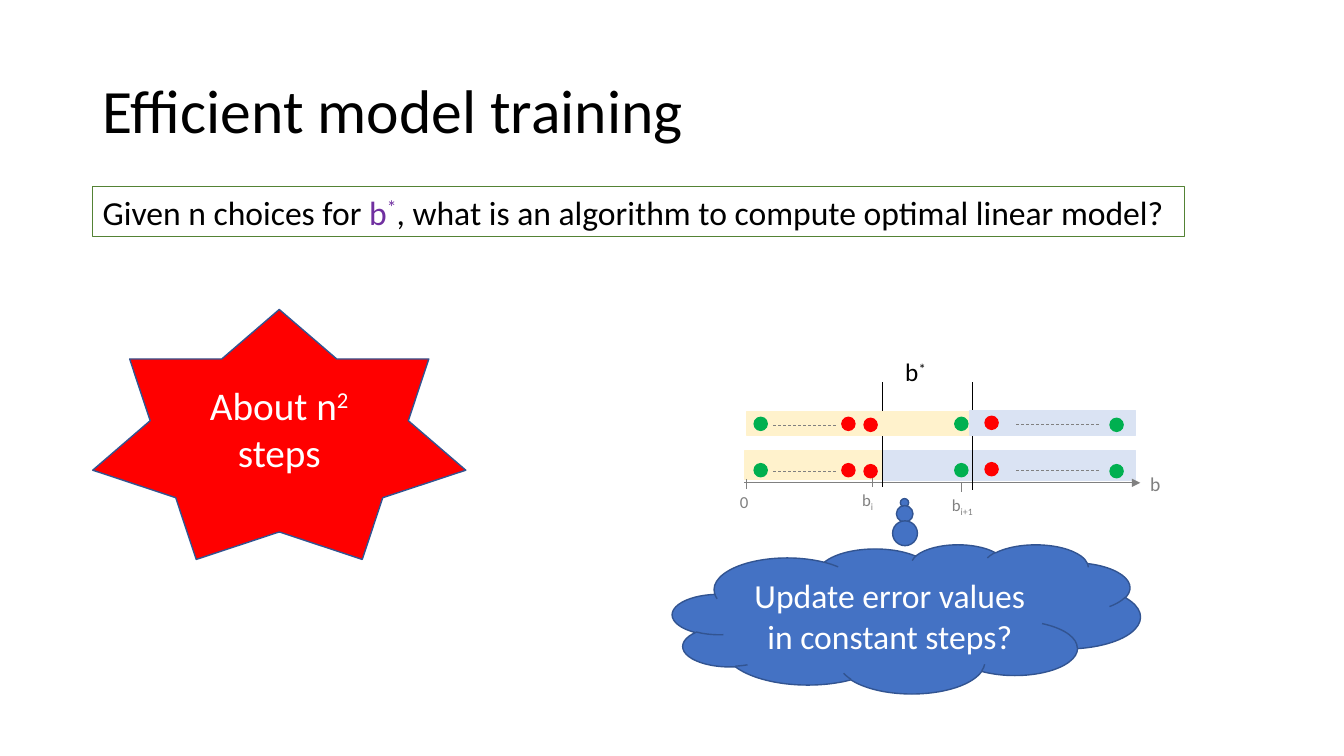
"""Build the slide on efficient training of a linear model."""
import pptx
import pptx.util
import pptx.dml.color
import pptx.enum.dml
import pptx.enum.shapes
import pptx.enum.text
import pptx.oxml.ns
import lxml.etree

Inches = pptx.util.Inches
Pt = pptx.util.Pt
RGBColor = pptx.dml.color.RGBColor
Shape = pptx.enum.shapes.MSO_SHAPE
Align = pptx.enum.text.PP_ALIGN
Anchor = pptx.enum.text.MSO_ANCHOR

BLACK = RGBColor(0x00, 0x00, 0x00)
WHITE = RGBColor(0xFF, 0xFF, 0xFF)
GRAY = RGBColor(0x80, 0x80, 0x80)
RED = RGBColor(0xFF, 0x00, 0x00)
GREEN = RGBColor(0x00, 0xB0, 0x50)
FRAME = RGBColor(0x54, 0x82, 0x35)
PURPLE = RGBColor(0x70, 0x30, 0xA0)
BLUE = RGBColor(0x44, 0x72, 0xC4)
NAVY = RGBColor(0x32, 0x54, 0x91)
CREAM = RGBColor(0xFF, 0xF2, 0xCC)
PALE = RGBColor(0xDA, 0xE3, 0xF3)

DOTS = [
    (7.48, 0, GREEN),
    (8.35, 0, RED),
    (8.57, 0.01, RED),
    (9.47, 0, GREEN),
    (9.77, -0.01, RED),
    (11.01, 0.01, GREEN),
]


def add_form(slide, kind, box, fill, line, width=1):
    """Add a preset shape with its fill and outline."""
    form = slide.shapes.add_shape(kind, *map(Inches, box))
    form.shadow.inherit = False
    if fill is None:
        form.fill.background()
    else:
        form.fill.solid()
        form.fill.fore_color.rgb = fill
    form.line.color.rgb = line
    form.line.width = Pt(width)
    return form


def add_line(slide, start, end, color=GRAY, dash=False, arrow=False):
    """Add a thin straight line, dashed or with an arrowhead if asked."""
    kind = pptx.enum.shapes.MSO_CONNECTOR.STRAIGHT
    line = slide.shapes.add_connector(kind, *map(Inches, start + end))
    line.line.color.rgb = color
    line.line.width = Pt(0.5)
    if dash:
        line.line.dash_style = pptx.enum.dml.MSO_LINE.DASH
    qn = pptx.oxml.ns.qn
    props = line._element.spPr
    if arrow:
        lxml.etree.SubElement(props.find(qn("a:ln")), qn("a:tailEnd"), type="triangle")
    lxml.etree.SubElement(props, qn("a:effectLst"))


def write(shape, runs, size, align=Align.LEFT, anchor=Anchor.TOP, wrap=True):
    """Write runs of text, color and baseline shift into a shape."""
    frame = shape.text_frame
    frame.word_wrap = wrap
    frame.vertical_anchor = anchor
    para = frame.paragraphs[0]
    para.alignment = align
    for text, color, shift in runs:
        run = para.add_run()
        run.text = text
        run.font.name = "Calibri"
        run.font.size = Pt(size)
        run.font.color.rgb = color
        if shift:
            run.font._element.set("baseline", str(shift * 1000))
    return para


def add_label(slide, box, runs, size, **style):
    """Add a text box with its runs."""
    label = slide.shapes.add_textbox(*map(Inches, box))
    return write(label, runs, size, **style)


def add_dots(slide, top):
    """Add the row of points and the dashes between them."""
    for left, drop, color in DOTS:
        add_form(slide, Shape.OVAL, (left, top + drop, 0.13, 0.13), color, color)
    for start, end, drop in [(7.67, 8.3, 0.08), (10.08, 10.9, 0.07)]:
        add_line(slide, (start, top + drop), (end, top + drop), dash=True)


def add_plot(slide):
    """Add the axis, both bands of points and the split marks."""
    add_form(slide, Shape.RECTANGLE, (8.76, 4.47, 2.5, 0.3), PALE, PALE)
    add_line(slide, (7.38, 4.79), (11.31, 4.79), arrow=True)
    add_form(slide, Shape.RECTANGLE, (7.39, 4.47, 1.36, 0.29), CREAM, CREAM)
    for left, top in [(7.4, 4.75), (8.65, 4.73), (9.54, 4.78)]:
        add_line(slide, (left, top), (left, top + 0.1))
    ticks = [
        ((7.2, 4.83, 0.36, 0.3), [("0", GRAY, 0)]),
        ((8.42, 4.81, 0.37, 0.3), [("b", GRAY, 0), ("i", GRAY, -25)]),
        ((9.31, 4.86, 0.47, 0.3), [("b", GRAY, 0), ("i+1", GRAY, -25)]),
    ]
    for box, runs in ticks:
        add_label(slide, box, runs, 12, align=Align.CENTER, wrap=False)
    add_label(slide, (11.31, 4.63, 0.31, 0.34), [("b", GRAY, 0)], 14, wrap=False)
    add_dots(slide, 4.6)
    star = [("b", BLACK, 0), ("*", BLACK, 30)]
    add_label(slide, (8.88, 3.49, 0.42, 0.4), star, 18, wrap=False)
    for left, end in [(8.75, 4.83), (9.64, 4.86)]:
        add_line(slide, (left, 3.79), (left, end), BLACK)
    add_form(slide, Shape.RECTANGLE, (7.41, 4.08, 2.21, 0.24), CREAM, CREAM)
    add_form(slide, Shape.RECTANGLE, (9.62, 4.07, 1.64, 0.25), PALE, PALE)
    add_dots(slide, 4.14)


def main():
    """Build and save the slide."""
    deck = pptx.Presentation()
    deck.slide_width = Inches(13.33)
    deck.slide_height = Inches(7.5)
    slide = deck.slides.add_slide(deck.slide_layouts[6])
    add_plot(slide)

    title = [("Efficient model training", BLACK, 0)]
    para = add_label(slide, (0.92, 0.4, 11.5, 1.45), title, 44, anchor=Anchor.MIDDLE)
    para.line_spacing = 0.9

    frame = add_form(slide, Shape.RECTANGLE, (0.92, 1.85, 10.83, 0.5), None, FRAME, 0.75)
    ask = [
        ("Given n choices for ", BLACK, 0),
        ("b", PURPLE, 0),
        ("*", PURPLE, 30),
        (", what is an algorithm to compute optimal linear model?", BLACK, 0),
    ]
    write(frame, ask, 24, wrap=False)

    burst = add_form(slide, Shape.STAR_7_POINT, (0.92, 3.07, 3.7, 2.48), RED, NAVY)
    steps = [("About n", WHITE, 0), ("2", WHITE, 30), (" steps", WHITE, 0)]
    write(burst, steps, 28, Align.CENTER, Anchor.MIDDLE)

    cloud = add_form(slide, Shape.CLOUD_CALLOUT, (6.67, 5.4, 4.64, 1.48), BLUE, NAVY)
    cloud.adjustments[0] = -0.004
    cloud.adjustments[1] = -0.779
    hint = [("Update error values in constant steps?", WHITE, 0)]
    write(cloud, hint, 24, Align.CENTER, Anchor.MIDDLE)

    deck.save("out.pptx")


if __name__ == "__main__":
    main()
